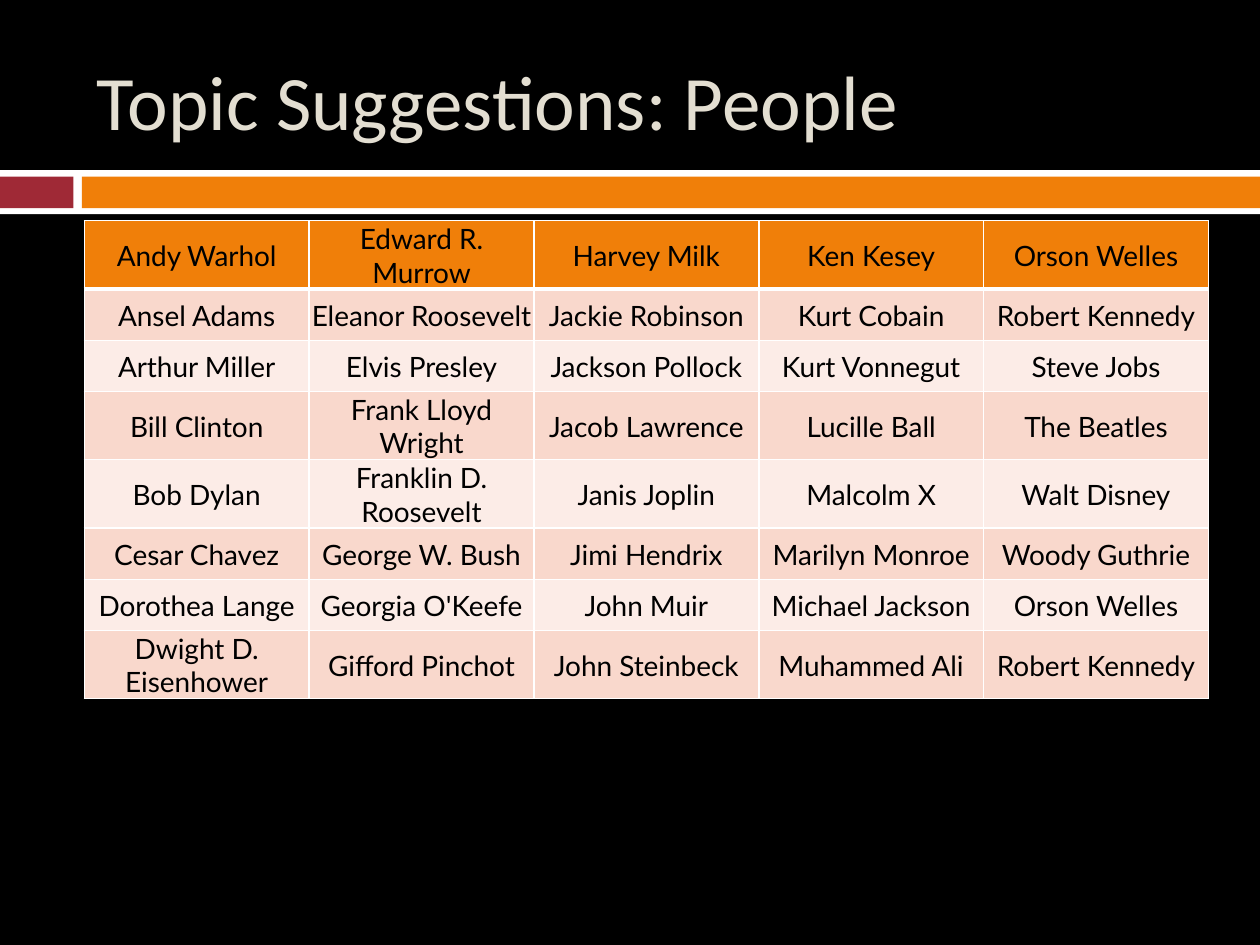
from lxml import etree
from pptx import Presentation
from pptx import util as u
from pptx.dml.color import RGBColor
from pptx.enum import shapes, text
from pptx.oxml.ns import qn

WHITE, BLACK, ORANGE, RED = "FFFFFF", "000000", "F07F09", "9F2936"
BAND_FILLS = ["FCECE7", "F9D8CC"]
LEFT, WIDTH = 1.7, 22.66
ROW_HEIGHT = 1.03

PEOPLE = [
    ["Andy Warhol", "Edward R. Murrow", "Harvey Milk", "Ken Kesey", "Orson Welles"],
    ["Ansel Adams", "Eleanor Roosevelt", "Jackie Robinson", "Kurt Cobain", "Robert Kennedy"],
    ["Arthur Miller", "Elvis Presley", "Jackson Pollock", "Kurt Vonnegut", "Steve Jobs"],
    ["Bill Clinton", "Frank Lloyd Wright", "Jacob Lawrence", "Lucille Ball", "The Beatles"],
    ["Bob Dylan", "Franklin D. Roosevelt", "Janis Joplin", "Malcolm X", "Walt Disney"],
    ["Cesar Chavez", "George W. Bush", "Jimi Hendrix", "Marilyn Monroe", "Woody Guthrie"],
    ["Dorothea Lange", "Georgia O'Keefe", "John Muir", "Michael Jackson", "Orson Welles"],
    ["Dwight D. Eisenhower", "Gifford Pinchot", "John Steinbeck", "Muhammed Ali", "Robert Kennedy"],
]


def paint(fill, color):
    fill.solid()
    fill.fore_color.rgb = RGBColor.from_string(color)


def style_text(para, font_name, size, color, align):
    para.alignment = align
    para.font.name = font_name
    para.font.size = u.Pt(size)
    para.font.color.rgb = RGBColor.from_string(color)


def add_bar(page, left, top, width, height, color):
    bar = page.shapes.add_shape(
        shapes.MSO_SHAPE.RECTANGLE, u.Cm(left), u.Cm(top), u.Cm(width), u.Cm(height))
    paint(bar.fill, color)
    bar.line.fill.background()
    bar.shadow.inherit = False


def set_title(page, wording):
    title = page.shapes.title
    title.left, title.top = u.Cm(LEFT), u.Cm(0.64)
    title.width, title.height = u.Cm(WIDTH), u.Cm(2.74)
    frame = title.text_frame
    frame.text = wording
    frame.word_wrap = True
    frame.auto_size = text.MSO_AUTO_SIZE.NONE
    frame.vertical_anchor = text.MSO_ANCHOR.MIDDLE
    style_text(frame.paragraphs[0], "Calibri", 44, "E3DED1", text.PP_ALIGN.LEFT)


def add_border(cell, side, points):
    properties = cell._tc.get_or_add_tcPr()
    line = etree.SubElement(properties, qn(f"a:{side}"), w=str(u.Pt(points)))
    fill = etree.SubElement(line, qn("a:solidFill"))
    etree.SubElement(fill, qn("a:srgbClr"), val=WHITE)


def format_cell(cell, name, row):
    cell.text = name
    cell.vertical_anchor = text.MSO_ANCHOR.MIDDLE
    cell.margin_left = cell.margin_right = cell.margin_top = u.Cm(0.03)
    cell.margin_bottom = 0
    style_text(cell.text_frame.paragraphs[0], "Lato", 16, BLACK, text.PP_ALIGN.CENTER)
    add_border(cell, "lnL", 1)
    add_border(cell, "lnR", 1)
    add_border(cell, "lnT", 3 if row == 1 else 1)
    add_border(cell, "lnB", 3 if row == 0 else 1)
    paint(cell.fill, BAND_FILLS[row % 2] if row else ORANGE)


def add_people_table(page):
    columns = len(PEOPLE[0])
    table = page.shapes.add_table(
        len(PEOPLE), columns, u.Cm(LEFT), u.Cm(4.45),
        u.Cm(WIDTH), u.Cm(ROW_HEIGHT * len(PEOPLE))).table
    for column in table.columns:
        column.width = u.Cm(WIDTH / columns)
    for row, names in enumerate(PEOPLE):
        table.rows[row].height = u.Cm(ROW_HEIGHT)
        for column, name in enumerate(names):
            format_cell(table.cell(row, column), name, row)


def main():
    deck = Presentation()
    deck.slide_width, deck.slide_height = u.Cm(25.4), u.Cm(19.05)
    page = deck.slides.add_slide(deck.slide_layouts[5])
    paint(page.background.fill, BLACK)
    add_bar(page, 0, 3.43, 25.4, 0.89, WHITE)
    add_bar(page, 0, 3.56, 1.48, 0.64, RED)
    add_bar(page, 1.65, 3.56, 23.75, 0.64, ORANGE)
    set_title(page, "Topic Suggestions: People")
    add_people_table(page)
    deck.save("out.pptx")


if __name__ == "__main__":
    main()
